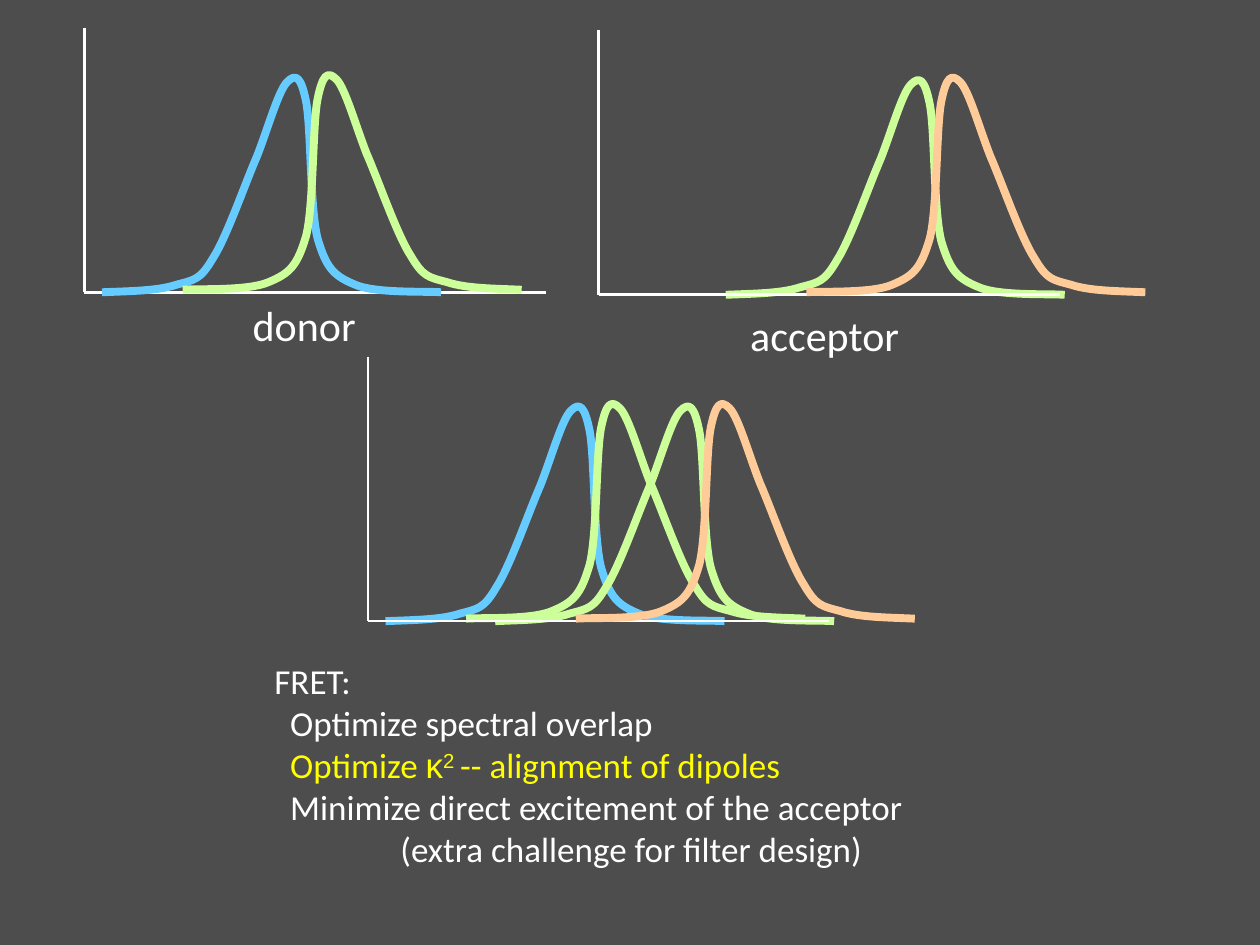
from lxml.etree import SubElement
from pptx import Presentation
from pptx.dml.color import RGBColor
from pptx.enum.shapes import MSO_CONNECTOR as Conn
from pptx.enum.text import MSO_ANCHOR as Anchor, MSO_AUTO_SIZE as AutoSize, PP_ALIGN as Align
from pptx.oxml.ns import qn
from pptx.util import Inches, Pt

rgb = RGBColor.from_string
WHITE, YELLOW = "FFFFFF", "FFFF00"
BLUE, GREEN, ORANGE = "66CCFF", "CCFF99", "FFCC99"

prs = Presentation()
prs.slide_width, prs.slide_height = Inches(10), Inches(7.5)
COL, ROW = prs.slide_width / 10, prs.slide_height / 7.5
s = prs.slides.add_slide(prs.slide_layouts[6])
s.background.fill.solid()
s.background.fill.fore_color.rgb = rgb("4D4D4D")

# Spectrum outline: start, then three Bezier points per segment (right, up)
SPECTRUM = [
    (0, 0),
    (.22, .01), (.44, .01), (.59, .06),
    (.74, .1), (.78, .1), (.88, .27),
    (.99, .44), (1.13, .85), (1.23, 1.08),
    (1.32, 1.31), (1.4, 1.6), (1.47, 1.67),
    (1.54, 1.74), (1.58, 1.71), (1.62, 1.51),
    (1.66, 1.3), (1.65, .67), (1.71, .43),
    (1.78, .19), (1.84, .13), (2.01, .06),
    (2.17, -.01), (2.58, .01), (2.69, 0),
]
AXIS_W, AXIS_H = 3.66, 2.1
EMISSION_SHIFT, EMISSION_RISE = 3.33, .02


def add_spectrum(x, base, color, emission):
    """Draw a smooth spectrum; emission is the mirror image of excitation."""
    if emission:
        x, base = x + EMISSION_SHIFT, base - EMISSION_RISE
    side = -1 if emission else 1
    pts = [(int((x + side * dx) * COL), int((base - dy) * ROW)) for dx, dy in SPECTRUM]
    fb = s.shapes.build_freeform(*pts[0])
    fb.add_line_segments(pts[1:], close=False)
    sp = fb.convert_to_shape()
    sp.shadow.inherit = False
    sp.fill.background()
    sp.line.color.rgb, sp.line.width = rgb(color), Pt(4.5)
    # Turn each three straight segments into one cubic curve
    outline = next(sp._element.iter(qn("a:path")))
    segments = outline.findall(qn("a:lnTo"))
    for i in range(0, len(segments), 3):
        curve = SubElement(outline, qn("a:cubicBezTo"))
        for seg in segments[i:i + 3]:
            curve.append(seg[0])
            outline.remove(seg)


def add_text(x, y, w, h, size, align, paragraphs):
    """Each paragraph is (indent, runs); each run is (text, font, colour, baseline)."""
    tf = s.shapes.add_textbox(int(x * COL), int(y * ROW), int(w * COL), int(h * ROW)).text_frame
    frame = {"word_wrap": False, "auto_size": AutoSize.SHAPE_TO_FIT_TEXT,
             "vertical_anchor": Anchor.MIDDLE}
    for name, value in frame.items():
        setattr(tf, name, value)
    for i, (indent, runs) in enumerate(paragraphs):
        p = tf.add_paragraph() if i else tf.paragraphs[0]
        p.alignment = align
        if indent:
            p._p.get_or_add_pPr().set("marL", str(int(indent * COL)))
        for text, font, color, baseline in runs:
            r = p.add_run()
            r.text = text
            for name, value in {"name": font, "size": Pt(size)}.items():
                setattr(r.font, name, value)
            r.font.color.rgb = rgb(color)
            if baseline:
                r.font._element.set("baseline", str(baseline * 1000))


# Panels: axis origin, spectra behind the axes, spectra in front (start, colour, emission)
panels = [
    (4.75, 2.34, [(5.76, GREEN, False)], [(5.76, ORANGE, True)]),
    (2.92, 4.93, [(3.06, BLUE, False), (3.06, GREEN, True), (3.93, GREEN, False)],
     [(3.93, ORANGE, True)]),
    (.67, 2.32, [], [(.81, BLUE, False), (.81, GREEN, True)]),
]
for x0, y0, behind, front in panels:
    for x, color, emission in behind:
        add_spectrum(x, y0, color, emission)
    for x1, y1, x2, y2 in [(x0, y0 - AXIS_H, x0, y0), (x0, y0, x0 + AXIS_W, y0)]:
        axis = s.shapes.add_connector(Conn.STRAIGHT, int(x1 * COL), int(y1 * ROW),
                                      int(x2 * COL), int(y2 * ROW))
        axis.line.color.rgb, axis.line.width = rgb(WHITE), Pt(1.5)
        SubElement(axis._element.spPr, qn("a:effectLst"))
    for x, color, emission in front:
        add_spectrum(x, y0, color, emission)

add_text(2.08, 5.18, 5.24, 1.78, 20, Align.LEFT, [
    (0, [("FRET:", "Calibri", WHITE, 0)]),
    (.125, [("Optimize spectral overlap", "Calibri", WHITE, 0)]),
    (.125, [("Optimize ", "Calibri", YELLOW, 0), ("κ", "Arial", YELLOW, 0),
            ("2 ", "Arial", YELLOW, 30), ("-- alignment of dipoles", "Calibri", YELLOW, 0)]),
    (.125, [("Minimize direct excitement of the acceptor", "Calibri", WHITE, 0)]),
    (1, [("(extra challenge for filter design)", "Calibri", WHITE, 0)]),
])
for label, x, y, w in [("donor", 1.9, 2.33, 1.03), ("acceptor", 5.85, 2.41, 1.39)]:
    add_text(x, y, w, .5, 24, Align.CENTER, [(0, [(label, "Calibri", WHITE, 0)])])

prs.save("out.pptx")
